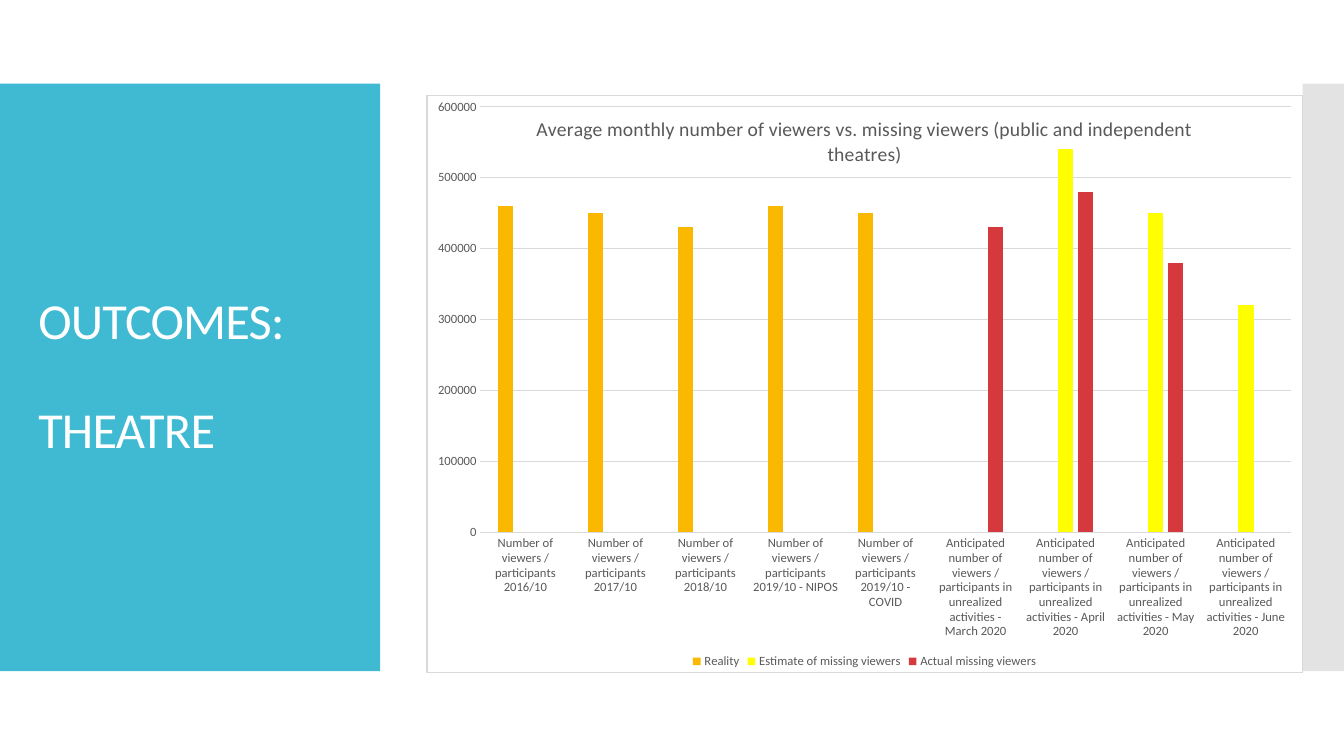
from lxml import etree
from pptx import Presentation
from pptx.chart.data import CategoryChartData
from pptx.dml.color import RGBColor
from pptx.enum.chart import XL_CHART_TYPE, XL_LEGEND_POSITION, XL_TICK_MARK
from pptx.enum.shapes import MSO_SHAPE
from pptx.enum.text import MSO_ANCHOR, MSO_AUTO_SIZE, PP_ALIGN
from pptx.oxml import parse_xml
from pptx.oxml.ns import qn
from pptx.util import Inches, Pt

COLUMNS = XL_CHART_TYPE.COLUMN_CLUSTERED
BOTTOM = XL_LEGEND_POSITION.BOTTOM
NO_TICK = XL_TICK_MARK.NONE
RECTANGLE = MSO_SHAPE.RECTANGLE
MIDDLE = MSO_ANCHOR.MIDDLE
NO_AUTOFIT = MSO_AUTO_SIZE.NONE
LEFT = PP_ALIGN.LEFT

FONT = "Calibri"
COLORS = {
    "white": "FFFFFF",
    "teal": "40BAD2",
    "strip": "C8C8C8",
    "text": "595959",
    "rule": "D9D9D9",
    "reality": "FAB900",
    "estimate": "FFFF00",
    "actual": "D5393D",
}
SEASONS = ["2016/10", "2017/10", "2018/10", "2019/10 - NIPOS", "2019/10 - COVID"]
MONTHS = ["March", "April", "May", "June"]
CATEGORIES = [f"Number of viewers / participants {season}" for season in SEASONS] + [
    f"Anticipated number of viewers / participants in unrealized activities - {month} 2020"
    for month in MONTHS
]
SERIES = [
    ("Reality", "reality", [460000, 450000, 430000, 460000, 450000] + [None] * 4),
    ("Estimate of missing viewers", "estimate", [None] * 6 + [540000, 450000, 320000]),
    ("Actual missing viewers", "actual", [None] * 5 + [430000, 480000, 380000, None]),
]
CHART_TITLE = (
    "Average monthly number of viewers vs. missing viewers (public and independent theatres)"
)
PLOT_AREA = {"x": 0.061, "y": 0.02, "w": 0.926, "h": 0.737}
CHART_NS = 'xmlns:c="http://schemas.openxmlformats.org/drawingml/2006/chart"'
DRAWING_NS = 'xmlns:a="http://schemas.openxmlformats.org/drawingml/2006/main"'


class OutcomeSlide:
    def __init__(self, presentation):
        self.slide = presentation.slides.add_slide(presentation.slide_layouts[5])

    def color(self, name):
        return RGBColor.from_string(COLORS[name])

    def style_font(self, font, size, color):
        font.name = FONT
        font.size = Pt(size)
        font.bold = False
        font.color.rgb = self.color(color)

    def style_line(self, line):
        line.color.rgb = self.color("rule")
        line.width = Pt(0.75)

    def panel(self, left, width, color, opacity=100):
        panel = self.slide.shapes.add_shape(
            RECTANGLE, Inches(left), Inches(0.83), Inches(width), Inches(5.83)
        )
        panel.shadow.inherit = False
        panel.fill.solid()
        panel.fill.fore_color.rgb = self.color(color)
        panel.line.fill.background()
        if opacity < 100:
            fill_color = panel.element.spPr.find(f"{qn('a:solidFill')}/{qn('a:srgbClr')}")
            etree.SubElement(fill_color, qn("a:alpha"), val=str(opacity * 1000))
        self.slide.shapes.title.element.addprevious(panel.element)

    def title(self, lines):
        title = self.slide.shapes.title
        title.left, title.top = Inches(0.28), Inches(1.23)
        title.width, title.height = Inches(3.22), Inches(5.03)
        frame = title.text_frame
        frame.text = "\n".join(lines)
        frame.word_wrap = True
        frame.auto_size = NO_AUTOFIT
        frame.vertical_anchor = MIDDLE
        for index, paragraph in enumerate(frame.paragraphs):
            paragraph.alignment = LEFT
            paragraph.line_spacing = 0.9
            paragraph.space_before = Pt(39 if index else 0)
            self.style_font(paragraph.font, 36, "white")
        for run in title.element.iter(qn("a:r")):
            run.get_or_add_rPr().set("spc", "-60")

    def chart(self):
        data = CategoryChartData()
        data.categories = CATEGORIES
        for name, _, values in SERIES:
            data.add_series(name, values)
        chart = self.slide.shapes.add_chart(
            COLUMNS, Inches(4.23), Inches(0.94), Inches(8.69), Inches(5.74), data
        ).chart
        self.style_font(chart.font, 10, "text")
        self.chart_title(chart)
        self.axes(chart)
        self.legend(chart)
        self.columns(chart.plots[0])
        self.chart_frame(chart)

    def chart_title(self, chart):
        chart.has_title = True
        chart.chart_title.include_in_layout = True
        frame = chart.chart_title.text_frame
        frame.text = CHART_TITLE
        self.style_font(frame.paragraphs[0].font, 14, "text")

    def axes(self, chart):
        for axis in (chart.category_axis, chart.value_axis):
            axis.major_tick_mark = NO_TICK
            axis.minor_tick_mark = NO_TICK
            self.style_font(axis.tick_labels.font, 9, "text")
        self.style_line(chart.category_axis.format.line)
        viewers = chart.value_axis
        viewers.minimum_scale = 0
        viewers.maximum_scale = 600000
        viewers.major_unit = 100000
        viewers.format.line.fill.background()
        viewers.has_major_gridlines = True
        self.style_line(viewers.major_gridlines.format.line)

    def legend(self, chart):
        chart.has_legend = True
        chart.legend.position = BOTTOM
        chart.legend.include_in_layout = False
        self.style_font(chart.legend.font, 9, "text")

    def columns(self, plot):
        plot.vary_by_categories = False
        plot.gap_width = 219
        plot.overlap = -27
        for series, (_, color, _) in zip(plot.series, SERIES):
            series.invert_if_negative = False
            series.format.fill.solid()
            series.format.fill.fore_color.rgb = self.color(color)

    def chart_frame(self, chart):
        chart_space = chart.element
        plot_area = chart_space.find(f"{qn('c:chart')}/{qn('c:plotArea')}")
        for layout in plot_area.findall(qn("c:layout")):
            plot_area.remove(layout)
        modes = "".join(f'<c:{side}Mode val="edge"/>' for side in "xy")
        sizes = "".join(f'<c:{side} val="{share}"/>' for side, share in PLOT_AREA.items())
        plot_area.insert(0, parse_xml(
            f'<c:layout {CHART_NS}><c:manualLayout><c:layoutTarget val="inner"/>'
            f"{modes}{sizes}</c:manualLayout></c:layout>"
        ))
        fill, border = (
            f'<a:solidFill><a:srgbClr val="{COLORS[name]}"/></a:solidFill>'
            for name in ("white", "rule")
        )
        chart_space.find(qn("c:txPr")).addprevious(parse_xml(
            f"<c:spPr {CHART_NS} {DRAWING_NS}>{fill}"
            f'<a:ln w="{Pt(0.75)}">{border}</a:ln></c:spPr>'
        ))


def main():
    presentation = Presentation()
    presentation.slide_width = Inches(13.33)
    presentation.slide_height = Inches(7.5)
    outcomes = OutcomeSlide(presentation)
    outcomes.panel(0, 3.77, "teal")
    outcomes.panel(12.92, 0.41, "strip", opacity=50)
    outcomes.title(["OUTCOMES:", "THEATRE"])
    outcomes.chart()
    presentation.save("out.pptx")


if __name__ == "__main__":
    main()
